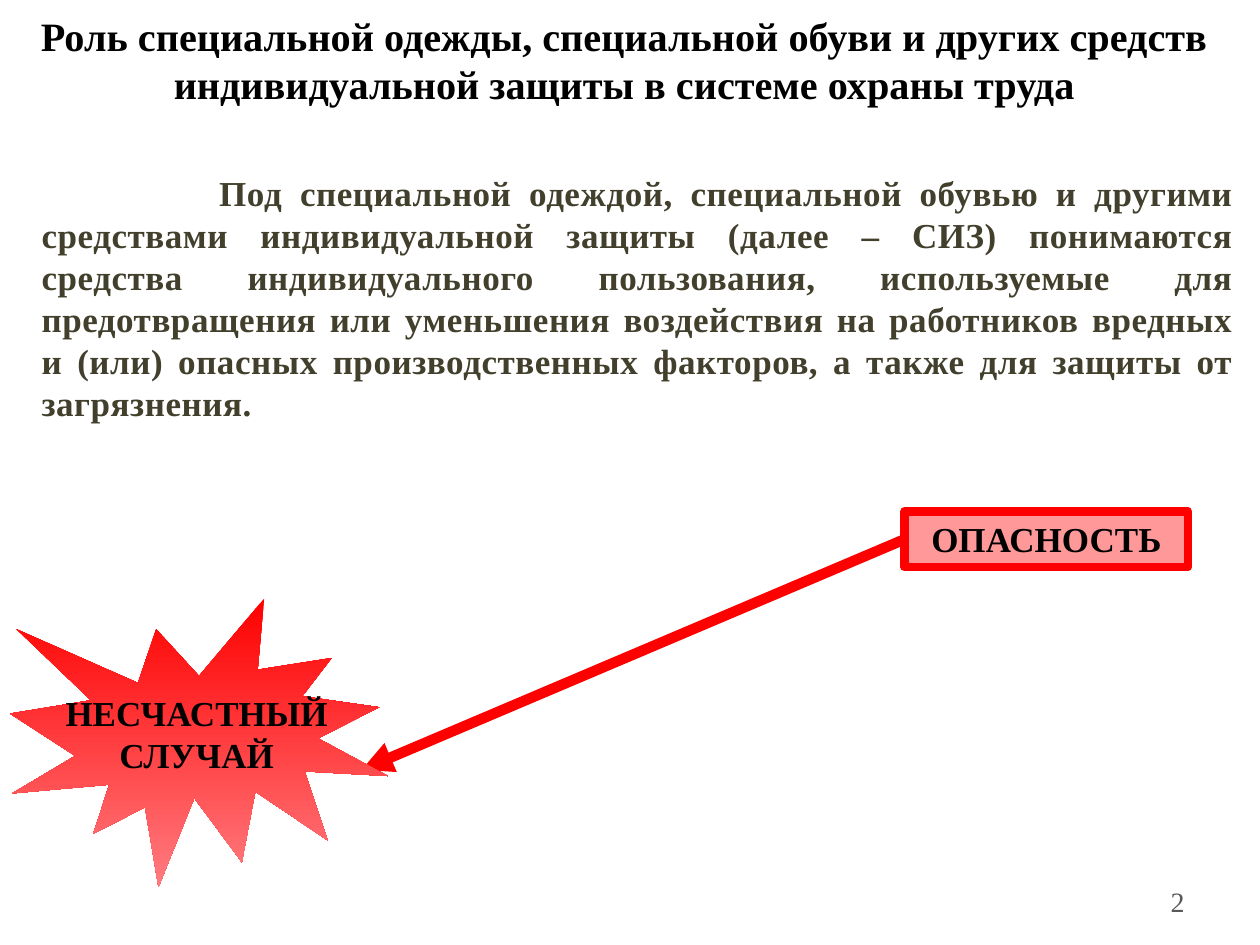
from dataclasses import dataclass

import pptx
import pptx.dml.color
import pptx.enum.dml
import pptx.enum.shapes
import pptx.enum.text
import pptx.oxml
import pptx.oxml.ns
import pptx.util

RGBColor = pptx.dml.color.RGBColor
Align = pptx.enum.text.PP_ALIGN
Anchor = pptx.enum.text.MSO_ANCHOR
Shape = pptx.enum.shapes.MSO_SHAPE

EMU_PER_PX = 9144  # 100 px to the inch
FONT = "Times New Roman"
BLACK = RGBColor(0x00, 0x00, 0x00)
GREY = RGBColor(0x59, 0x59, 0x59)
OLIVE = RGBColor(0x42, 0x40, 0x2C)
RED = RGBColor(0xFF, 0x00, 0x00)
PINK = RGBColor(0xFF, 0x99, 0x99)
CORAL = RGBColor(0xFF, 0x7C, 0x80)


@dataclass(frozen=True)
class Box:
    left: int
    top: int
    width: int
    height: int


@dataclass(frozen=True)
class Style:
    size: int
    color: RGBColor = BLACK
    bold: bool = True
    align: Align = Align.CENTER
    anchor: Anchor = Anchor.TOP
    wrap: bool = True


LABEL = Style(20)
SEAL_LABEL = Style(20, anchor=Anchor.MIDDLE, wrap=False)


def px(n: int) -> pptx.util.Emu:
    return pptx.util.Emu(n * EMU_PER_PX)


def place(sp, box: Box) -> None:
    sp.left, sp.top = px(box.left), px(box.top)
    sp.width, sp.height = px(box.width), px(box.height)


def write(sp, lines: list[str], style: Style) -> None:
    tf = sp.text_frame
    tf.word_wrap = style.wrap
    tf.auto_size = pptx.enum.text.MSO_AUTO_SIZE.NONE
    tf.vertical_anchor = style.anchor
    for i, line in enumerate(lines):
        p = tf.paragraphs[0] if i == 0 else tf.add_paragraph()
        p.alignment = style.align
        r = p.add_run()
        r.text = line
        r.font.name = FONT
        r.font.size = pptx.util.Pt(style.size)
        r.font.bold = style.bold
        r.font.color.rgb = style.color


def add_shape(s, kind: Shape, box: Box):
    sp = s.shapes.add_shape(kind, px(box.left), px(box.top), px(box.width), px(box.height))
    sp.shadow.inherit = False
    return sp


def add_arrow(s, x1: int, y1: int, x2: int, y2: int):
    cn = s.shapes.add_connector(
        pptx.enum.shapes.MSO_CONNECTOR.STRAIGHT, px(x1), px(y1), px(x2), px(y2))
    cn.line.color.rgb = RED
    cn.line.width = pptx.util.Pt(6)
    ln = cn.line._get_or_add_ln()
    pptx.oxml.ns.qn("a:tailEnd")
    ln.append(pptx.oxml.parse_xml(
        f'<a:tailEnd {pptx.oxml.ns.nsdecls("a")} type="triangle"/>'))
    cn._element.spPr.append(pptx.oxml.parse_xml(
        f'<a:effectLst {pptx.oxml.ns.nsdecls("a")}/>'))
    return cn


def format_definition(p) -> None:
    """Plain justified paragraph with a deep first line and spaced letters."""
    p.space_before = pptx.util.Pt(12)
    pPr = p._p.get_or_add_pPr()
    pPr.set("marL", "0")
    pPr.set("indent", str(px(141)))
    pPr.append(pptx.oxml.parse_xml(f'<a:buNone {pptx.oxml.ns.nsdecls("a")}/>'))
    p.runs[0]._r.get_or_add_rPr().set("spc", "30")


def main() -> None:
    prs = pptx.Presentation()
    prs.slide_width, prs.slide_height = px(1000), px(750)
    s = prs.slides.add_slide(prs.slide_layouts[1])

    # Title
    title = s.shapes.title
    place(title, Box(0, 4, 992, 55))
    write(title, ["Роль специальной одежды, специальной обуви и других средств "
                  "индивидуальной защиты в системе охраны труда"], Style(23))

    # Definition
    body = s.placeholders[1]
    place(body, Box(23, 131, 966, 212))
    write(body, ["Под специальной одеждой, специальной обувью и другими средствами "
                 "индивидуальной защиты (далее – СИЗ) понимаются средства "
                 "индивидуального пользования, используемые для предотвращения или "
                 "уменьшения воздействия на работников вредных и (или) опасных "
                 "производственных факторов, а также для защиты от загрязнения."],
          Style(20, OLIVE, align=Align.JUSTIFY))
    format_definition(body.text_frame.paragraphs[0])

    # Arrow from the danger to the accident, behind both shapes
    arrow = add_arrow(s, 718, 428, 287, 611)

    # Danger
    danger = add_shape(s, Shape.RECTANGLE, Box(718, 406, 225, 44))
    danger.fill.solid()
    danger.fill.fore_color.rgb = PINK
    danger.line.color.rgb = RED
    danger.line.width = pptx.util.Pt(5)
    write(danger, ["ОПАСНОСТЬ"], LABEL)
    arrow.begin_connect(danger, 1)

    # Accident
    accident = add_shape(s, Shape.EXPLOSION1, Box(8, 475, 300, 229))
    accident.fill.gradient()
    accident.fill.gradient_angle = 270
    for stop, color, position in zip(accident.fill.gradient_stops, (RED, CORAL), (0, 1)):
        stop.color.rgb = color
        stop.position = position
    accident.line.fill.background()
    write(accident, ["НЕСЧАСТНЫЙ", "СЛУЧАЙ"], SEAL_LABEL)

    # Slide number
    number = s.shapes.add_textbox(px(717), px(695), px(233), px(40))
    write(number, ["2"], Style(16, GREY, False, Align.RIGHT, Anchor.MIDDLE))

    prs.save("out.pptx")


if __name__ == "__main__":
    main()
